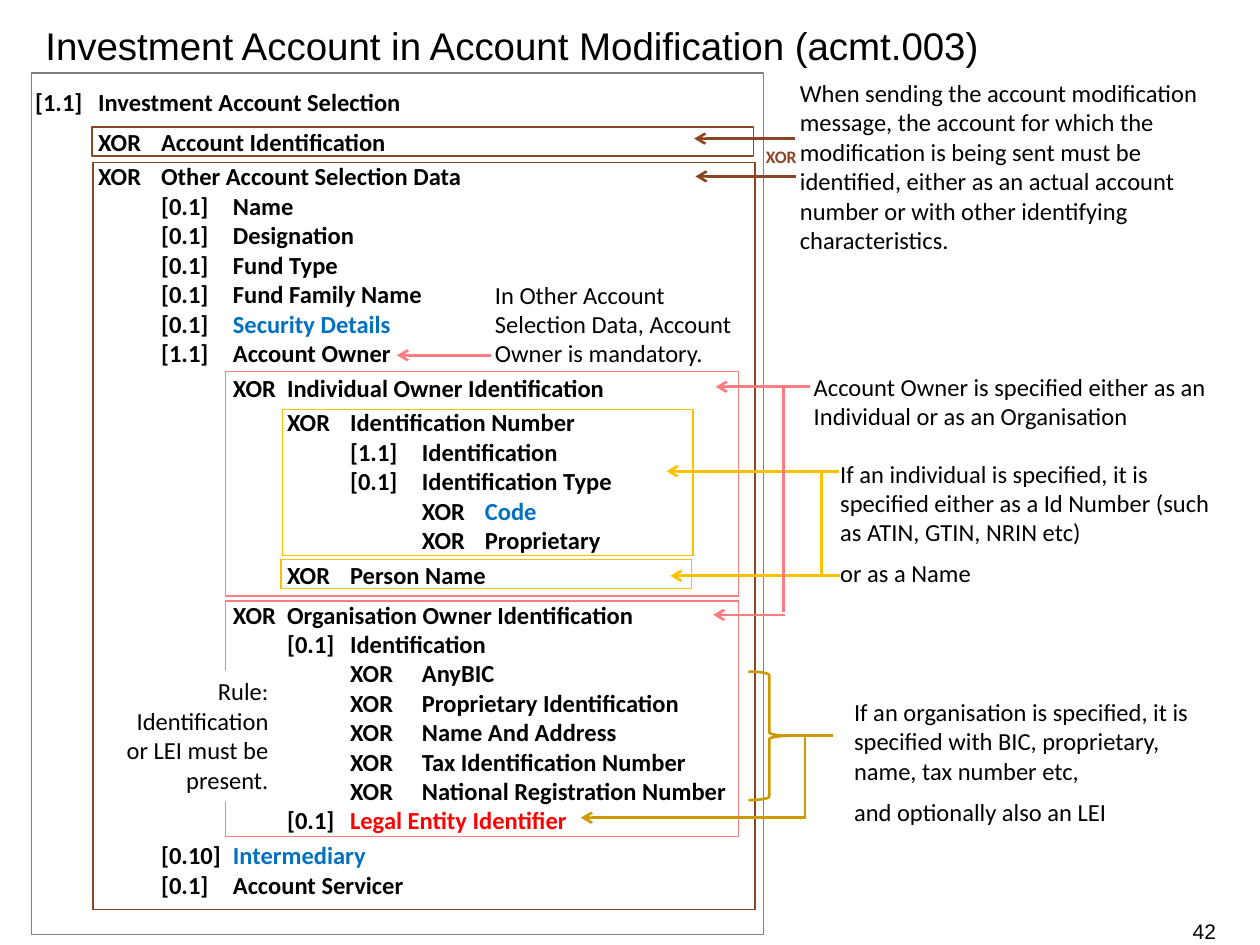
from lxml import etree
from pptx import Presentation
from pptx import util as u
from pptx.dml import color
from pptx.enum import shapes, text
from pptx.oxml import ns

COLUMNS, ROWS = 100, 75
BLACK, WHITE, GREY = "000000", "FFFFFF", "808080"
BROWN, PINK, YELLOW, OCHRE = "8B4522", "FF7C80", "FFC000", "CC9900"
BLUE, RED = "0070C0", "FF0000"
TAB_STOPS = [0.5, 1, 1.26, 1.57, 2, 2.5, 3.07, 3.57]


def rgb(value):
    return color.RGBColor.from_string(value)


def apply(target, values):
    for name, value in values.items():
        setattr(target, name, value)


def add_child(parent, tag, **attributes):
    child = etree.SubElement(parent, ns.qn(tag))
    for name, value in attributes.items():
        child.set(name, str(value))
    return child


class SlideBuilder:
    body = {"name": "Calibri", "size": u.Pt(14), "bold": False}
    strong = {**body, "bold": True}
    tag = {**strong, "size": u.Pt(10)}
    heading = {"name": "Arial", "size": u.Pt(22), "bold": False}
    number = {**heading, "size": u.Pt(12)}

    def __init__(self, presentation):
        self.column = presentation.slide_width / COLUMNS
        self.row = presentation.slide_height / ROWS
        self.slide = presentation.slides.add_slide(presentation.slide_layouts[5])

    def place(self, column, row, width=0, height=0):
        return [round(length) for length in (column * self.column, row * self.row,
                                             width * self.column, height * self.row)]

    def add_text(self, paragraph, content, font, hue=BLACK):
        run = paragraph.add_run()
        run.text = content
        apply(run.font, font)
        run.font.color.rgb = rgb(hue)

    def title(self, area, content):
        shape = self.slide.shapes.title
        apply(shape, dict(zip(("left", "top", "width", "height"), self.place(*area))))
        apply(shape.text_frame, {"auto_size": text.MSO_AUTO_SIZE.NONE, "word_wrap": True,
                                 "vertical_anchor": text.MSO_ANCHOR.BOTTOM})
        paragraph = shape.text_frame.paragraphs[0]
        paragraph.alignment = text.PP_ALIGN.LEFT
        self.add_text(paragraph, content, self.heading)

    def note(self, area, content, font=None, hue=BLACK, align=text.PP_ALIGN.LEFT,
             wrap=True, fill=None):
        shape = self.slide.shapes.add_textbox(*self.place(*area))
        shape.text_frame.word_wrap = wrap
        if fill:
            shape.fill.solid()
            shape.fill.fore_color.rgb = rgb(fill)
        paragraph = shape.text_frame.paragraphs[0]
        paragraph.alignment = align
        self.add_text(paragraph, content, font or self.body, hue)

    def outline(self, area, hue, width=0.75, fill=None,
                kind=shapes.MSO_SHAPE.RECTANGLE):
        shape = self.slide.shapes.add_shape(kind, *self.place(*area))
        shape.shadow.inherit = False
        if fill:
            shape.fill.solid()
            shape.fill.fore_color.rgb = rgb(fill)
        else:
            shape.fill.background()
        shape.line.color.rgb = rgb(hue)
        shape.line.width = u.Pt(width)

    def line(self, start, end, hue, arrow=False):
        ends = self.place(*start)[:2] + self.place(*end)[:2]
        connector = self.slide.shapes.add_connector(shapes.MSO_CONNECTOR.STRAIGHT, *ends)
        connector.line.color.rgb = rgb(hue)
        connector.line.width = u.Pt(1.5)
        properties = connector._element.spPr
        if arrow:
            add_child(properties.find(ns.qn("a:ln")), "a:tailEnd", type="arrow")
        add_child(properties, "a:effectLst")

    def tree(self, area, entries):
        frame = self.slide.shapes.add_textbox(*self.place(*area)).text_frame
        frame.word_wrap = True
        for index, (depth, label, content, after, hue) in enumerate(entries):
            paragraph = frame.add_paragraph() if index else frame.paragraphs[0]
            paragraph.space_after = u.Pt(after)
            tabs = add_child(paragraph._p.get_or_add_pPr(), "a:tabLst")
            for stop in TAB_STOPS:
                add_child(tabs, "a:tab", pos=u.Inches(stop), algn="l")
            self.add_text(paragraph, "\t" * depth + label + "\t", self.strong)
            self.add_text(paragraph, content, self.strong, hue)


ENTRIES = [
    (0, "[1.1]", "Investment Account Selection", 6, BLACK),
    (1, "XOR", "Account Identification", 3, BLACK),
    (1, "XOR", "Other Account Selection Data", 0, BLACK),
    (2, "[0.1]", "Name", 0, BLACK),
    (2, "[0.1]", "Designation", 0, BLACK),
    (2, "[0.1]", "Fund Type", 0, BLACK),
    (2, "[0.1]", "Fund Family Name", 0, BLACK),
    (2, "[0.1]", "Security Details", 0, BLUE),
    (2, "[1.1]", "Account Owner", 3, BLACK),
    (4, "XOR", "Individual Owner Identification", 3, BLACK),
    (5, "XOR", "Identification Number", 0, BLACK),
    (6, "[1.1]", "Identification", 0, BLACK),
    (6, "[0.1]", "Identification Type", 0, BLACK),
    (7, "XOR", "Code", 0, BLUE),
    (7, "XOR", "Proprietary", 3, BLACK),
    (5, "XOR", "Person Name", 6, BLACK),
    (4, "XOR", "Organisation Owner Identification", 0, BLACK),
    (5, "[0.1]", "Identification", 0, BLACK),
    (6, "XOR", "AnyBIC", 0, BLACK),
    (6, "XOR", "Proprietary Identification", 0, BLACK),
    (6, "XOR", "Name And Address", 0, BLACK),
    (6, "XOR", "Tax Identification Number", 0, BLACK),
    (6, "XOR", "National Registration Number", 0, BLACK),
    (5, "[0.1]", "Legal Entity Identifier", 3, RED),
    (2, "[0.10]", "Intermediary", 0, BLUE),
    (2, "[0.1]", "Account Servicer", 0, BLACK),
]

FRAMES = [
    ((7.4, 12.9, 52.5, 59.3), BROWN, 1),
    ((7.3, 10.1, 52.5, 2.3), BROWN, 1),
    ((17.9, 29.5, 40.7, 17.8), PINK, 0.75),
    ((17.9, 47.7, 40.7, 18.7), PINK, 0.75),
    ((22.4, 32.5, 32.6, 11.6), YELLOW, 0.75),
    ((22.3, 44.4, 32.6, 2.3), YELLOW, 0.75),
]

NOTES = [
    ((62.5, 5.7, 36.9, 15.1), "When sending the account modification message, the account for "
     "which the modification is being sent must be identified, either as an actual account "
     "number or with other identifying characteristics."),
    ((38.3, 21.7, 21.6, 8.1), "In Other Account Selection Data, Account Owner is mandatory."),
    ((63.6, 29, 36.9, 5.7),
     "Account Owner is specified either as an Individual or as an Organisation"),
    ((65.7, 35.9, 33.2, 8.1), "If an individual is specified, it is specified either as a "
     "Id Number (such as ATIN, GTIN, NRIN etc)"),
    ((65.7, 43.8, 33.2, 3.4), "or as a Name"),
    ((66.8, 54.8, 30.8, 8.1), "If an organisation is specified, it is specified with BIC, "
     "proprietary, name, tax number etc,"),
    ((66.8, 62.8, 33.2, 3.4), "and optionally also an LEI"),
]

ARROWS = [
    (63.1, 55.1, 11, BROWN), (63.2, 55.2, 14, BROWN),
    (39, 31.5, 28.2, PINK), (64.3, 56.8, 30.7, PINK), (62.3, 56.6, 48.8, PINK),
    (66.6, 52.9, 37.4, YELLOW), (66.7, 53.2, 45.7, YELLOW),
    (64, 46.1, 64.9, OCHRE),
]

LINKS = [
    ((62.2, 30.6), (62.2, 48.6), PINK),
    ((65.2, 37.4), (65.2, 45.7), YELLOW),
    ((66.1, 58.4), (62.2, 58.4), OCHRE),
    ((63.9, 64.8), (63.9, 58.4), OCHRE),
]


def main():
    presentation = Presentation()
    apply(presentation, {"slide_width": u.Inches(10), "slide_height": u.Inches(7.5)})
    builder = SlideBuilder(presentation)
    builder.outline((2.5, 5.8, 58.1, 68.4), GREY, fill=WHITE)
    builder.title((2.6, 1.1, 96.8, 4.8),
                  "Investment Account in Account Modification (acmt.003)")
    builder.note((89.2, 72.4, 8.3, 2.5), "42", builder.number, align=text.PP_ALIGN.RIGHT)
    builder.tree((1.8, 6.4, 65.9, 65.6), ENTRIES)
    for frame in FRAMES:
        builder.outline(*frame)
    for note in NOTES:
        builder.note(*note)
    builder.note((59.8, 11.1, 4.5, 2.7), "XOR", builder.tag, BROWN, wrap=False)
    builder.outline((59.4, 53.3, 3.3, 10.2), OCHRE, 1.5, kind=shapes.MSO_SHAPE.RIGHT_BRACE)
    for start, end, row, hue in ARROWS:
        builder.line((start, row), (end, row), hue, arrow=True)
    for link in LINKS:
        builder.line(*link)
    builder.note((9, 53.2, 13.3, 10.4), "Rule: Identification or LEI must be present.",
                 align=text.PP_ALIGN.RIGHT, fill=WHITE)
    presentation.save("out.pptx")


if __name__ == "__main__":
    main()
